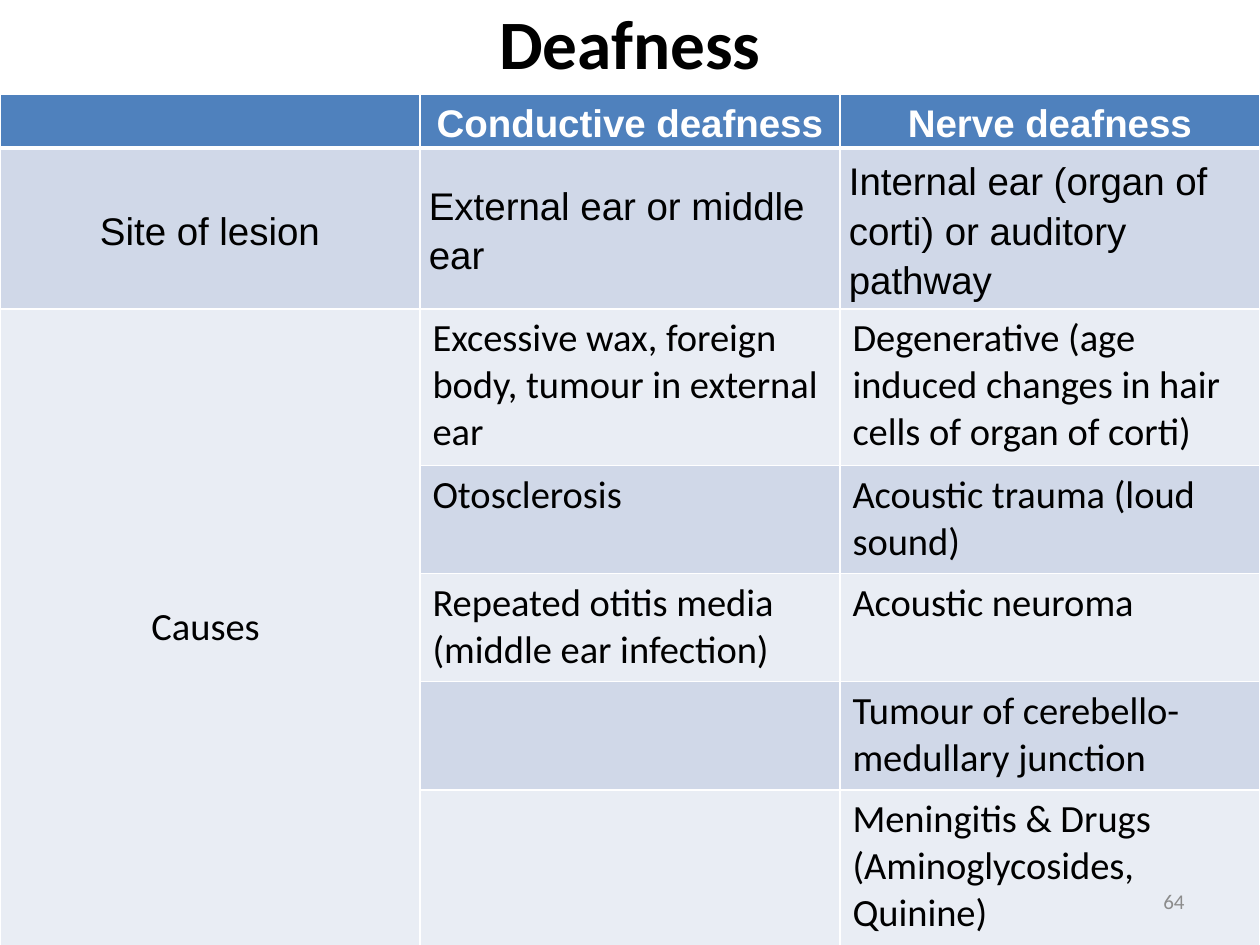
from dataclasses import dataclass

from lxml.etree import SubElement
from pptx import Presentation
from pptx.dml.color import RGBColor
from pptx.enum.text import MSO_ANCHOR, PP_ALIGN
from pptx.oxml import parse_xml
from pptx.oxml.ns import nsdecls
from pptx.util import Cm, Pt


@dataclass(frozen=True)
class Theme:
    heading_font: str = "Arial"
    body_font: str = "Calibri"
    title_size: float = 39.6
    table_size: float = 22
    number_size: float = 12
    black: str = "000000"
    white: str = "FFFFFF"
    grey: str = "8C8C8C"
    header: str = "4F81BD"
    bands: tuple = ("E9EDF4", "D0D8E8")


theme = Theme()


def write(frame, text, font, size, color, bold=False, alignment=PP_ALIGN.LEFT):
    paragraph = frame.paragraphs[0]
    paragraph.alignment = alignment
    run = paragraph.add_run()
    run.text = text
    run.font.name = font
    run.font.size = Pt(size)
    run.font.bold = bold
    run.font.color.rgb = RGBColor.from_string(color)
    return paragraph


def set_borders(cell, color, bottom_width):
    properties = cell._tc.get_or_add_tcPr()
    for position, side in enumerate("LRTB"):
        width = Pt(bottom_width if side == "B" else 1)
        line = parse_xml(f'<a:ln{side} {nsdecls("a")} w="{width}"><a:solidFill/></a:ln{side}>')
        SubElement(line[0], line[0].tag.replace("solidFill", "srgbClr"), val=color)
        properties.insert(position, line)


presentation = Presentation()
presentation.slide_width = Cm(25.4)
presentation.slide_height = Cm(19.05)
slide = presentation.slides.add_slide(presentation.slide_layouts[6])

title = slide.shapes.add_textbox(Cm(0), Cm(0), Cm(25.4), Cm(1.7))
title.text_frame.word_wrap = True
title.text_frame.vertical_anchor = MSO_ANCHOR.MIDDLE
write(title.text_frame, "Deafness", theme.body_font, theme.title_size, theme.black, True, PP_ALIGN.CENTER)

rows = [
    ("", "Conductive deafness", "Nerve deafness"),
    ("Site of lesion", "External ear or middle ear", "Internal ear (organ of corti) or auditory pathway"),
    (
        "Causes ",
        "Excessive wax, foreign body, tumour in external ear",
        "Degenerative (age induced changes in hair cells of organ of corti)",
    ),
    ("", "Otosclerosis", "Acoustic trauma (loud sound)"),
    ("", "Repeated otitis media (middle ear infection)", "Acoustic neuroma"),
    ("", "", "Tumour of cerebello-medullary junction"),
    ("", "", "Meningitis & Drugs (Aminoglycosides, Quinine)"),
]
row_heights = [1.03, 3.25, 3.15, 2.18, 2.18, 2.18, 3.15]

table = slide.shapes.add_table(
    len(rows), 3, Cm(0), Cm(1.91), Cm(25.4), Cm(sum(row_heights))
).table
for column in table.columns:
    column.width = Cm(25.4 / 3)

for row_index, (texts, height) in enumerate(zip(rows, row_heights)):
    table.rows[row_index].height = Cm(height)
    is_header = row_index == 0
    is_heading_style = row_index < 2
    for column_index, text in enumerate(texts):
        cell = table.cell(row_index, column_index)
        band = 0 if column_index == 0 and row_index > 1 else row_index % 2
        cell.fill.solid()
        cell.fill.fore_color.rgb = RGBColor.from_string(theme.header if is_header else theme.bands[band])
        set_borders(cell, theme.white, 3 if is_header else 1)
        if is_heading_style:
            cell.margin_left = cell.margin_right = Cm(0.18)
            cell.margin_top = cell.margin_bottom = Cm(0)
        if is_heading_style or column_index == 0:
            cell.vertical_anchor = MSO_ANCHOR.MIDDLE
        if text:
            paragraph = write(
                cell.text_frame,
                text,
                theme.heading_font if is_heading_style else theme.body_font,
                theme.table_size,
                theme.white if is_header else theme.black,
                is_header,
                PP_ALIGN.CENTER if is_header or column_index == 0 else PP_ALIGN.LEFT,
            )
            if is_heading_style:
                paragraph.line_spacing = 1.15

table.cell(2, 0).merge(table.cell(6, 0))

number = slide.shapes.add_textbox(Cm(18.2), Cm(17.66), Cm(5.93), Cm(1.01))
number.text_frame.word_wrap = True
number.text_frame.vertical_anchor = MSO_ANCHOR.MIDDLE
write(number.text_frame, "64", theme.body_font, theme.number_size, theme.grey, alignment=PP_ALIGN.RIGHT)

presentation.save("out.pptx")
